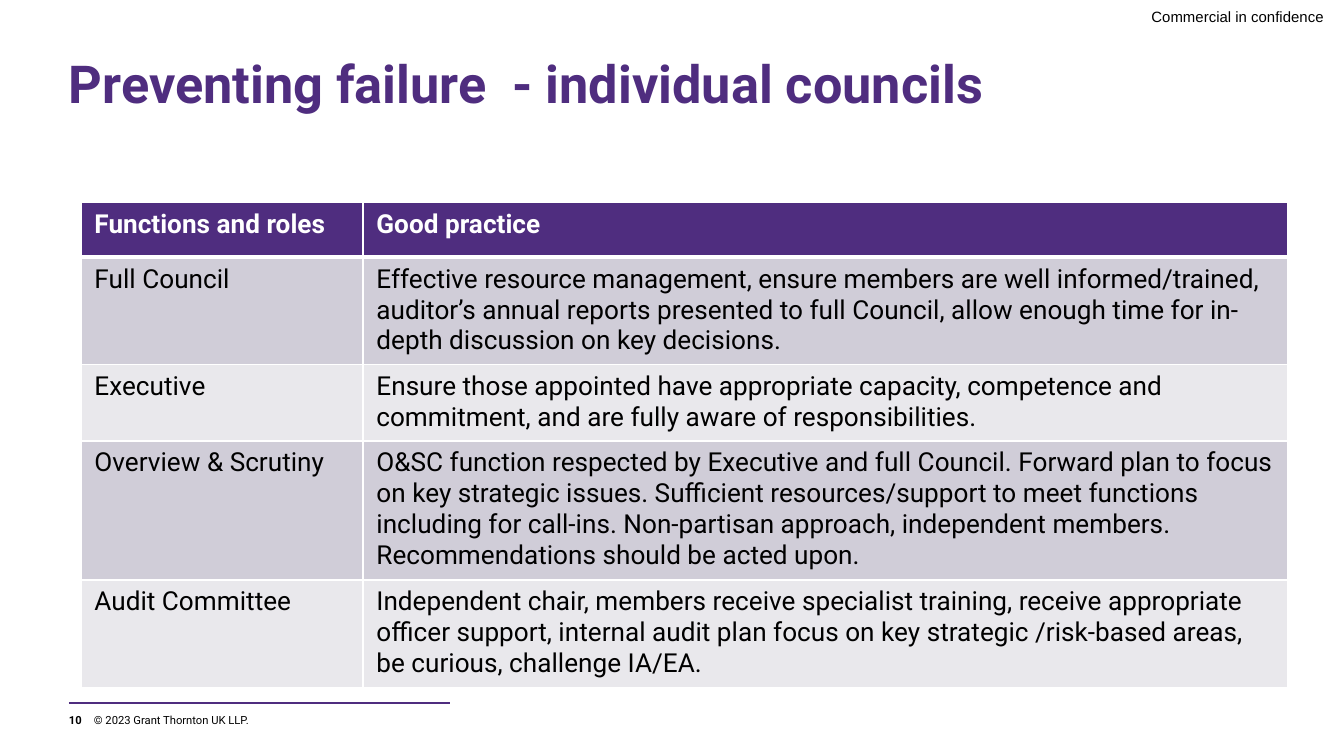
import pptx
import pptx.util
import pptx.dml.color
import pptx.enum.shapes
import pptx.enum.text
import pptx.oxml.ns
from lxml import etree

SCALE = 914400 / 134.4
PURPLE, WHITE, BLACK = "4F2D7F", "FFFFFF", "000000"
BANDS = ["D0CDD8", "E9E8EC"]
COLUMN_WIDTHS = [282, 925]
ROW_HEIGHTS = [55, 106, 75, 137, 106]
ROWS = [
    ("Functions and roles", "Good practice"),
    ("Full Council",
     "Effective resource management, ensure members are well informed/trained, "
     "auditor’s annual reports presented to full Council, allow enough time for "
     "in-depth discussion on key decisions."),
    ("Executive",
     "Ensure those appointed have appropriate capacity, competence and "
     "commitment, and are fully aware of responsibilities."),
    ("Overview & Scrutiny",
     "O&SC function respected by Executive and full Council. Forward plan to "
     "focus on key strategic issues. Sufficient resources/support to meet "
     "functions including for call-ins. Non-partisan approach, independent "
     "members. Recommendations should be acted upon."),
    ("Audit Committee",
     "Independent chair, members receive specialist training, receive "
     "appropriate officer support, internal audit plan focus on key strategic "
     "/risk-based areas, be curious, challenge IA/EA."),
]


def px(n):
    return pptx.util.Emu(round(n * SCALE))


def rgb(value):
    return pptx.dml.color.RGBColor.from_string(value)


def write(tf, text, size=14, color=BLACK, bold=False, font="Roboto",
          align=None, spacing=None):
    p = tf.paragraphs[0]
    p.alignment = align
    p.line_spacing = spacing
    r = p.add_run()
    r.text = text
    r.font.size = pptx.util.Pt(size)
    r.font.name = font
    r.font.bold = bold
    r.font.color.rgb = rgb(color)


def add_text(s, box, text, right_inset=0, anchor="TOP", **style):
    tf = s.shapes.add_textbox(*map(px, box)).text_frame
    tf.word_wrap = True
    tf.margin_left = tf.margin_top = tf.margin_bottom = 0
    tf.margin_right = px(right_inset)
    tf.vertical_anchor = getattr(pptx.enum.text.MSO_ANCHOR, anchor)
    write(tf, text, **style)


def add_rule(s, x1, x2, y):
    line = s.shapes.add_connector(
        pptx.enum.shapes.MSO_CONNECTOR.STRAIGHT, px(x1), px(y), px(x2), px(y))
    line.line.color.rgb = rgb(PURPLE)
    line.line.width = pptx.util.Pt(1.5)
    etree.SubElement(line._element.spPr, pptx.oxml.ns.qn("a:effectLst"))


def set_borders(cell, **widths):
    qn = pptx.oxml.ns.qn
    tcPr = cell._tc.get_or_add_tcPr()
    for side in "LRTB":
        width = pptx.util.Pt(widths.get(side, 1))
        ln = etree.SubElement(tcPr, qn(f"a:ln{side}"), w=str(width))
        fill = etree.SubElement(ln, qn("a:solidFill"))
        etree.SubElement(fill, qn("a:srgbClr"), val=WHITE)


def add_roles_table(s, left, top):
    table = s.shapes.add_table(
        len(ROWS), len(COLUMN_WIDTHS), px(left), px(top),
        px(sum(COLUMN_WIDTHS)), px(sum(ROW_HEIGHTS))).table
    table.horz_banding = False
    for column, width in zip(table.columns, COLUMN_WIDTHS):
        column.width = px(width)
    for i, (row, height, texts) in enumerate(zip(table.rows, ROW_HEIGHTS, ROWS)):
        row.height = px(height)
        header = i == 0
        for cell, text in zip(row.cells, texts):
            set_borders(cell, T=3 if i == 1 else 1, B=3 if header else 1)
            cell.fill.solid()
            cell.fill.fore_color.rgb = rgb(PURPLE if header else BANDS[(i - 1) % 2])
            write(cell.text_frame, text, bold=header,
                  color=WHITE if header else BLACK)


def main():
    prs = pptx.Presentation()
    prs.slide_width, prs.slide_height = px(1344), px(756)
    s = prs.slides.add_slide(prs.slide_layouts[6])
    add_text(s, (94, 713, 579, 13), "© 2023 Grant Thornton UK LLP.", size=6)
    add_rule(s, 69, 450, 703)
    add_text(s, (1134, 0, 210, 32), "Commercial in confidence", size=8,
             font="Arial", right_inset=20, anchor="MIDDLE",
             align=pptx.enum.text.PP_ALIGN.RIGHT)
    add_text(s, (69, 713, 24, 13), "10", size=6, bold=True)
    add_text(s, (69, 58, 1060, 117), "Preventing failure  - individual councils",
             size=28, color=PURPLE, bold=True, spacing=0.9)
    add_roles_table(s, 81, 202)
    prs.save("out.pptx")


if __name__ == "__main__":
    main()
